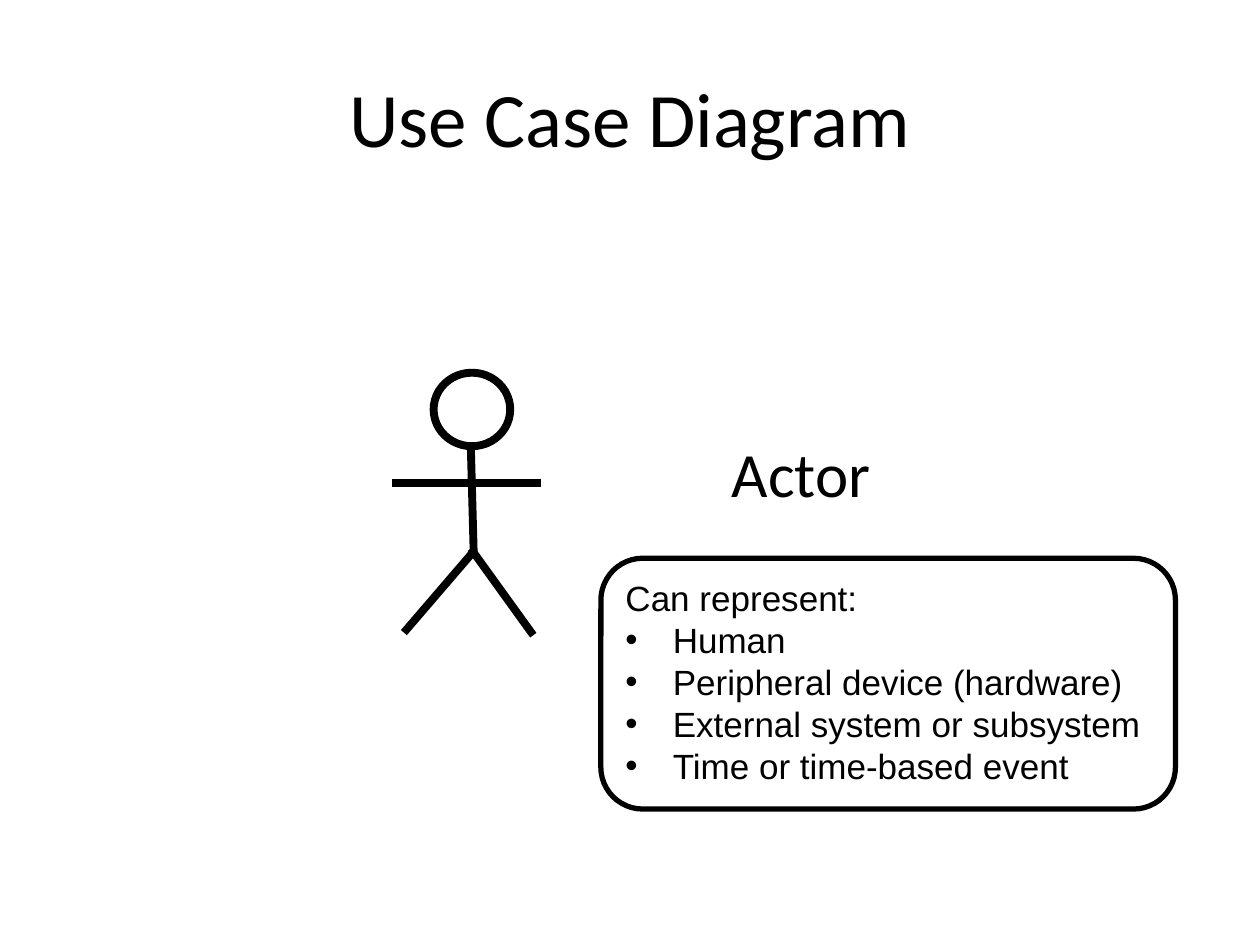
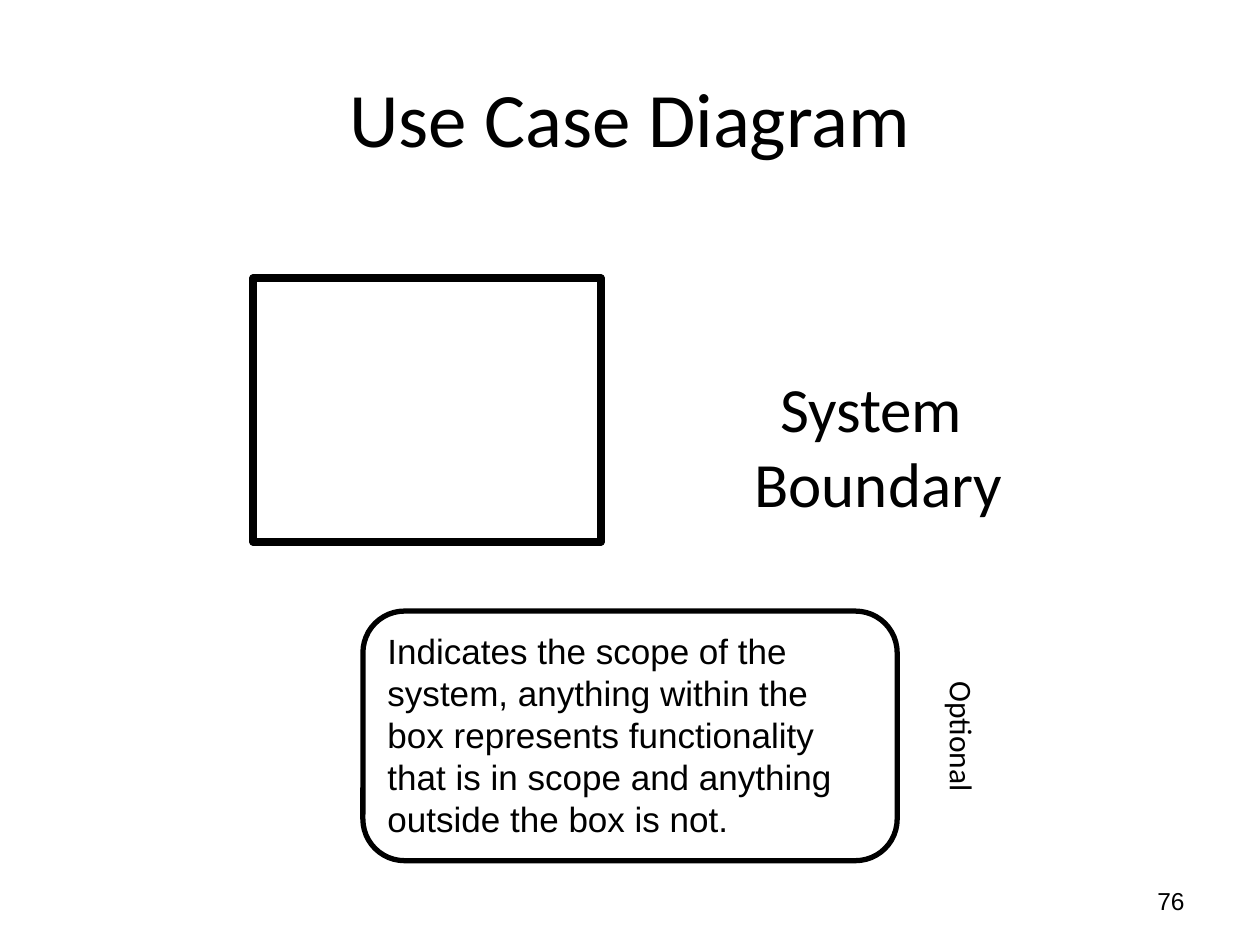
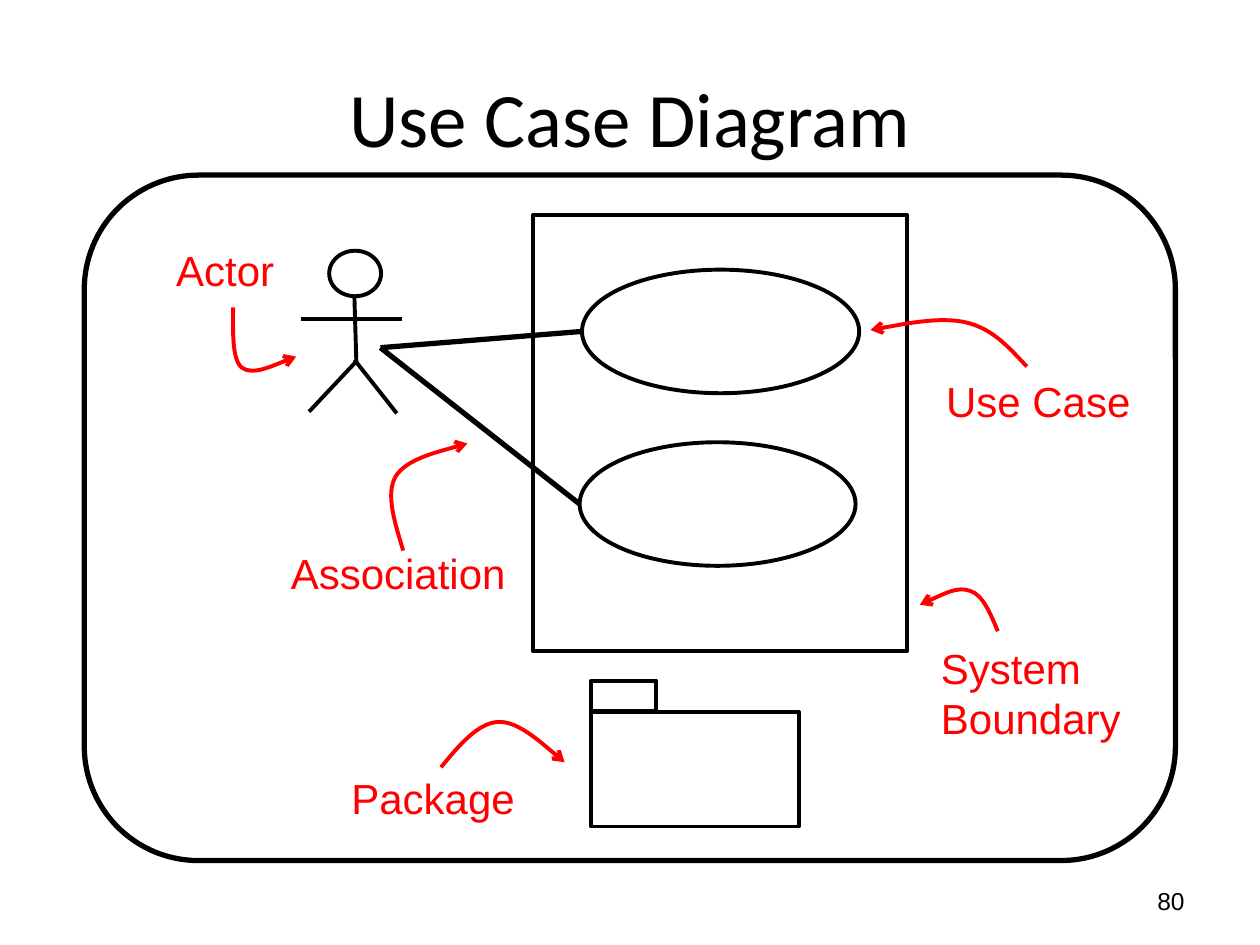
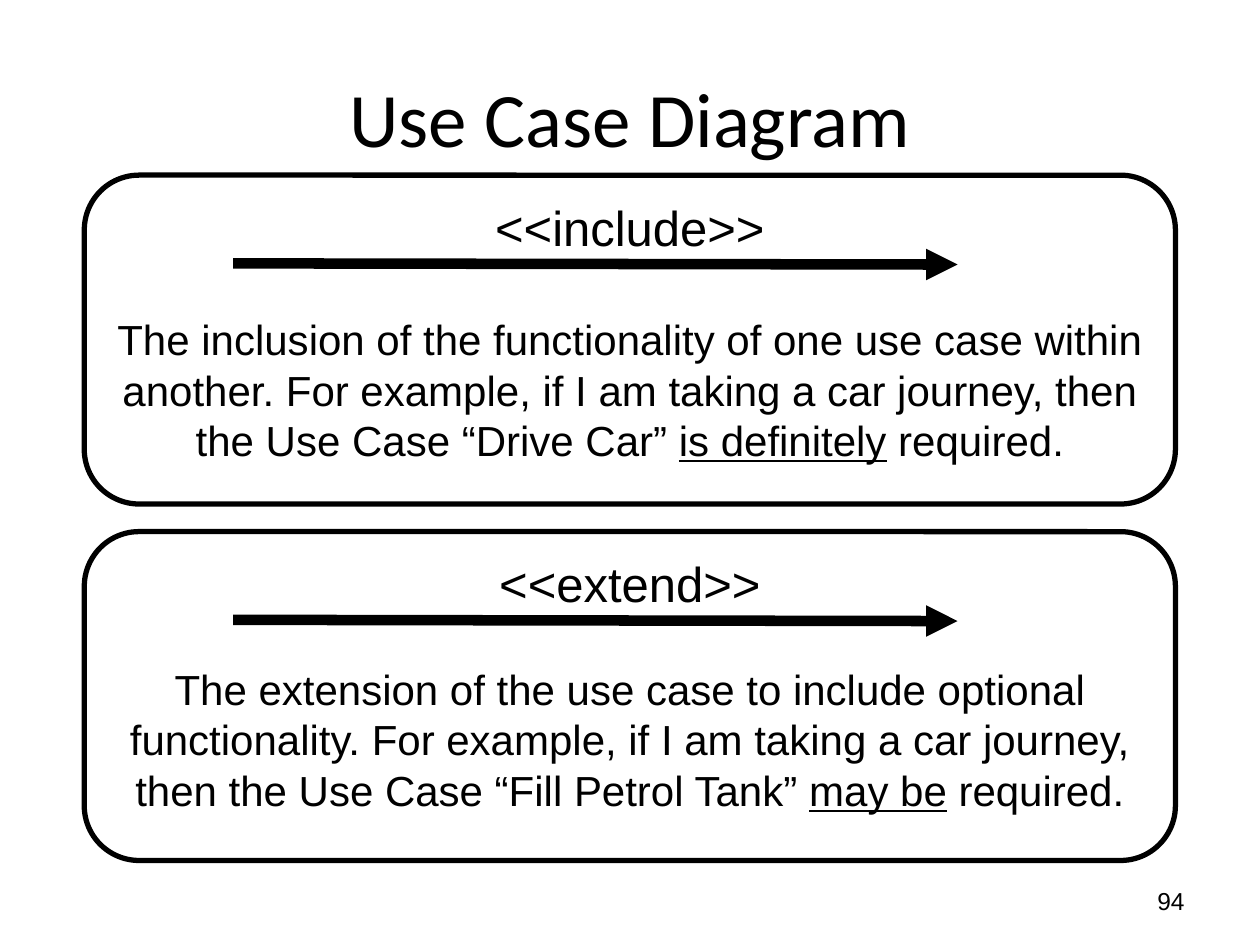
from dataclasses import dataclass
from typing import NamedTuple

from lxml import etree
from pptx import Presentation
from pptx.dml.color import RGBColor
from pptx.enum.shapes import MSO_CONNECTOR, MSO_SHAPE
from pptx.enum.text import MSO_ANCHOR, MSO_AUTO_SIZE, PP_ALIGN
from pptx.oxml.ns import qn
from pptx.util import Pt

LEFT, CENTER, RIGHT = PP_ALIGN.LEFT, PP_ALIGN.CENTER, PP_ALIGN.RIGHT
TOP, MIDDLE = MSO_ANCHOR.TOP, MSO_ANCHOR.MIDDLE
RECT, ROUND, OVAL = MSO_SHAPE.RECTANGLE, MSO_SHAPE.ROUNDED_RECTANGLE, MSO_SHAPE.OVAL
STRAIGHT = MSO_CONNECTOR.STRAIGHT
GROW = MSO_AUTO_SIZE.SHAPE_TO_FIT_TEXT

BLACK, RED = "000000", "FF0000"
SANS, HEAD = "Arial", "Calibri"
TITLE_ONLY = 5
THIN, FRAME, THICK, HEAVY = 2.25, 3, 4.5, 6


class Box(NamedTuple):
    x: float
    y: float
    w: float
    h: float


class Point(NamedTuple):
    x: float
    y: float


class Run(NamedTuple):
    text: str
    under: bool = False


@dataclass
class Para:
    runs: list[Run]
    size: float
    gap: float = 0
    bullet: bool = False


@dataclass
class Label:
    """Red name of a diagram part, with the curved arrow that leaves it."""
    lines: list[str]
    box: Box
    curve: list[Point]


@dataclass
class Relation:
    name: str
    top: float
    gap: float
    runs: list[Run]


TITLE_BOX = Box(36, 21.6, 648, 90)
PAGE_BOX = Box(516, 500.4, 168, 28.8)

# Limbs of the stick figure, as shares of its width and height.
LIMBS = [
    (Point(0.53, 0.28), Point(0.55, 0.7)),
    (Point(1, 0.42), Point(0, 0.42)),
    (Point(0.55, 0.68), Point(0.08, 0.99)),
    (Point(0.53, 0.67), Point(0.95, 1)),
]

LABELS = [
    Label(["System", "Boundary"], Box(530.6, 363.6, 118, 65.5),
          [Point(570.2, 360.7), Point(565.9, 350.6), Point(561.6, 339.8),
           Point(554.4, 337.7), Point(547.2, 334.8), Point(525.6, 345.6)]),
    Label(["Package"], Box(193.7, 437.8, 108.7, 36),
          [Point(252, 438.5), Point(262.1, 426.2), Point(272.9, 413.3),
           Point(284.4, 412.6), Point(295.9, 411.8), Point(322.6, 435.6)]),
    Label(["Actor"], Box(93.6, 136, 71.3, 36.7),
          [Point(133.2, 175.7), Point(133.2, 190.1), Point(132.5, 205.2),
           Point(138.2, 210.2), Point(144.7, 214.6), Point(169.2, 203.8)]),
    Label(["Association"], Box(159.1, 309.6, 139, 36),
          [Point(230.4, 314.6), Point(225.4, 298.1), Point(220.3, 282.2),
           Point(226.1, 272.2), Point(232.6, 262.1), Point(267.1, 253.4)]),
    Label(["Use Case"], Box(533.5, 211, 121, 36.7),
          [Point(586.8, 209.5), Point(576.7, 198.7), Point(567.4, 187.9),
           Point(552.2, 184.3), Point(537.1, 180.7), Point(497.5, 188.6)]),
]

RELATIONS = [
    Relation("<<include>>", 100.1, 33, [
        Run("The inclusion of the functionality of one use case within another. "
            "For example, if I am taking a car journey, then the Use Case “Drive Car” "),
        Run("is definitely", True), Run(" required.")]),
    Relation("<<extend>>", 303.8, 29, [
        Run("The extension of the use case to include optional functionality. "
            "For example, if I am taking a car journey, then the Use Case "
            "“Fill Petrol Tank” "),
        Run("may be", True), Run(" required.")]),
]


def rgb(code: str) -> RGBColor:
    return RGBColor.from_string(code)


def place(box: Box) -> list[int]:
    return [Pt(side) for side in box]


def plain(lines: list[str], size: float) -> list[Para]:
    return [Para([Run(line)], size) for line in lines]


def write(frame, paras: list[Para], font: str = SANS, color: str = BLACK,
          align=LEFT, anchor=TOP) -> None:
    frame.vertical_anchor = anchor
    for i, para in enumerate(paras):
        line = frame.paragraphs[0] if i == 0 else frame.add_paragraph()
        line.alignment = align
        if para.gap:
            line.space_before = Pt(para.gap)
        if para.bullet:
            props = line._p.get_or_add_pPr()
            props.set("marL", str(Pt(27)))
            props.set("indent", str(-Pt(27)))
            etree.SubElement(props, qn("a:buFont")).set("typeface", SANS)
            etree.SubElement(props, qn("a:buChar")).set("char", "•")
        for part in para.runs:
            run = line.add_run()
            run.text = part.text
            run.font.name = font
            run.font.size = Pt(para.size)
            run.font.color.rgb = rgb(color)
            if part.under:
                run.font.underline = True


def stroke(shape, width: float, color: str = BLACK, tip: str = "") -> None:
    shape.line.color.rgb = rgb(color)
    shape.line.width = Pt(width)
    if tip:
        edge = shape.element.spPr.find(qn("a:ln"))
        etree.SubElement(edge, qn("a:tailEnd")).set("type", tip)


def outline(shapes, kind, box: Box, width: float):
    shape = shapes.add_shape(kind, *place(box))
    shape.shadow.inherit = False
    shape.fill.background()
    stroke(shape, width)
    return shape


def panel(shapes, box: Box, paras: list[Para], align=LEFT) -> None:
    """Rounded frame with text from its top edge."""
    shape = outline(shapes, ROUND, box, FRAME)
    shape.text_frame.word_wrap = True
    write(shape.text_frame, paras, align=align)


def link(shapes, start: Point, end: Point, width: float, tip: str = "") -> None:
    line = shapes.add_connector(STRAIGHT, *place(start + end))
    stroke(line, width, tip=tip)
    etree.SubElement(line.element.spPr, qn("a:effectLst"))


def curve(shapes, points: list[Point]) -> None:
    """Red arrow of two Bezier arcs; the last control point is the end."""
    spots = [(Pt(p.x), Pt(p.y)) for p in points + points[-1:]]
    pen = shapes.build_freeform(*spots[0])
    pen.add_line_segments(spots[1:], close=False)
    shape = pen.convert_to_shape()
    shape.shadow.inherit = False
    shape.fill.background()
    stroke(shape, THIN, RED, "arrow")
    steps = list(shape.element.iter(qn("a:lnTo")))
    track = steps[0].getparent()
    for i in range(0, len(steps), 3):
        arc = etree.SubElement(track, qn("a:cubicBezTo"))
        for step in steps[i:i + 3]:
            arc.append(step[0])
            track.remove(step)


def note(shapes, box: Box, paras: list[Para], font: str = SANS,
         color: str = BLACK, align=LEFT):
    """Text box that keeps its lines unbroken."""
    text = shapes.add_textbox(*place(box))
    text.text_frame.word_wrap = False
    text.text_frame.auto_size = GROW
    write(text.text_frame, paras, font, color, align)
    return text


def actor(shapes, box: Box, width: float) -> None:
    group = shapes.add_group_shape().shapes
    head = Box(box.x + 0.28 * box.w, box.y, 0.515 * box.w, 0.28 * box.h)
    outline(group, OVAL, head, width)
    for limb in LIMBS:
        ends = [Point(box.x + p.x * box.w, box.y + p.y * box.h) for p in limb]
        link(group, *ends, width)


def start(deck, page: str = ""):
    """Add a slide with the shared title and its page number, if any."""
    slide = deck.slides.add_slide(deck.slide_layouts[TITLE_ONLY])
    title = slide.shapes.title
    title.left, title.top, title.width, title.height = place(TITLE_BOX)
    write(title.text_frame, plain(["Use Case Diagram"], 44), HEAD,
          align=CENTER, anchor=MIDDLE)
    if page:
        foot = slide.shapes.add_textbox(*place(PAGE_BOX)).text_frame
        foot.word_wrap = True
        write(foot, plain([page], 14), align=RIGHT, anchor=MIDDLE)
    return slide.shapes


def show_actor(deck) -> None:
    shapes = start(deck)
    actor(shapes, Box(224, 213, 85, 150), THICK)
    note(shapes, Box(408.2, 244.8, 99.4, 51.1), plain(["Actor"], 36), HEAD,
         align=CENTER)
    kinds = ["Human", "Peripheral device (hardware)",
             "External system or subsystem", "Time or time-based event"]
    items = [Para([Run(kind)], 20, bullet=True) for kind in kinds]
    panel(shapes, Box(343.4, 319, 328.3, 143.3),
          plain(["Can represent:"], 20) + items)


def show_bounds(deck) -> None:
    shapes = start(deck, "76")
    note(shapes, Box(416.9, 207.4, 170, 94.3), plain(["System ", "Boundary"], 36),
         HEAD, align=CENTER)
    outline(shapes, RECT, Box(144.7, 159.1, 198.7, 150.5), THICK)
    panel(shapes, Box(207.4, 349.2, 305.3, 142.6), plain(
        ["Indicates the scope of the system, anything within the box represents "
         "functionality that is in scope and anything outside the box is not."], 20))
    side = note(shapes, Box(516.2, 364.3, 48.2, 113), plain(["Optional"], 18),
                HEAD, align=CENTER)
    side.element.txBody.bodyPr.set("vert", "vert")


def show_parts(deck) -> None:
    shapes = start(deck, "80")
    outline(shapes, ROUND, Box(48.2, 100.1, 623.5, 391.7), FRAME)
    outline(shapes, RECT, Box(304.6, 123.1, 213.8, 249.1), THIN)
    actor(shapes, Box(172, 143.3, 57.6, 92.9), THIN)
    folder = shapes.add_group_shape().shapes
    outline(folder, RECT, Box(337.7, 406.8, 118.8, 65.5), THIN)
    outline(folder, RECT, Box(337.7, 389, 37.4, 17.5), THIN)
    hand = Point(217.4, 198.7)
    for case in (Box(332.6, 154.1, 158.4, 70.6), Box(331.2, 252.7, 157.7, 70.6)):
        outline(shapes, OVAL, case, THIN)
        link(shapes, hand, Point(case.x, case.y + case.h / 2), FRAME)
    for label in LABELS:
        note(shapes, label.box, plain(label.lines, 24), color=RED)
        curve(shapes, label.curve)


def show_links(deck) -> None:
    shapes = start(deck, "94")
    for item in RELATIONS:
        panel(shapes, Box(48.2, item.top, 623.5, 187.9),
              [Para([Run(item.name)], 28), Para(item.runs, 24, item.gap)], CENTER)
        level = item.top + 50.4
        link(shapes, Point(133.2, level), Point(547.2, level + 0.7), HEAVY, "triangle")


def main() -> None:
    deck = Presentation()
    deck.slide_width, deck.slide_height = Pt(720), Pt(540)
    for show in (show_actor, show_bounds, show_parts, show_links):
        show(deck)
    deck.save("out.pptx")


if __name__ == "__main__":
    main()
